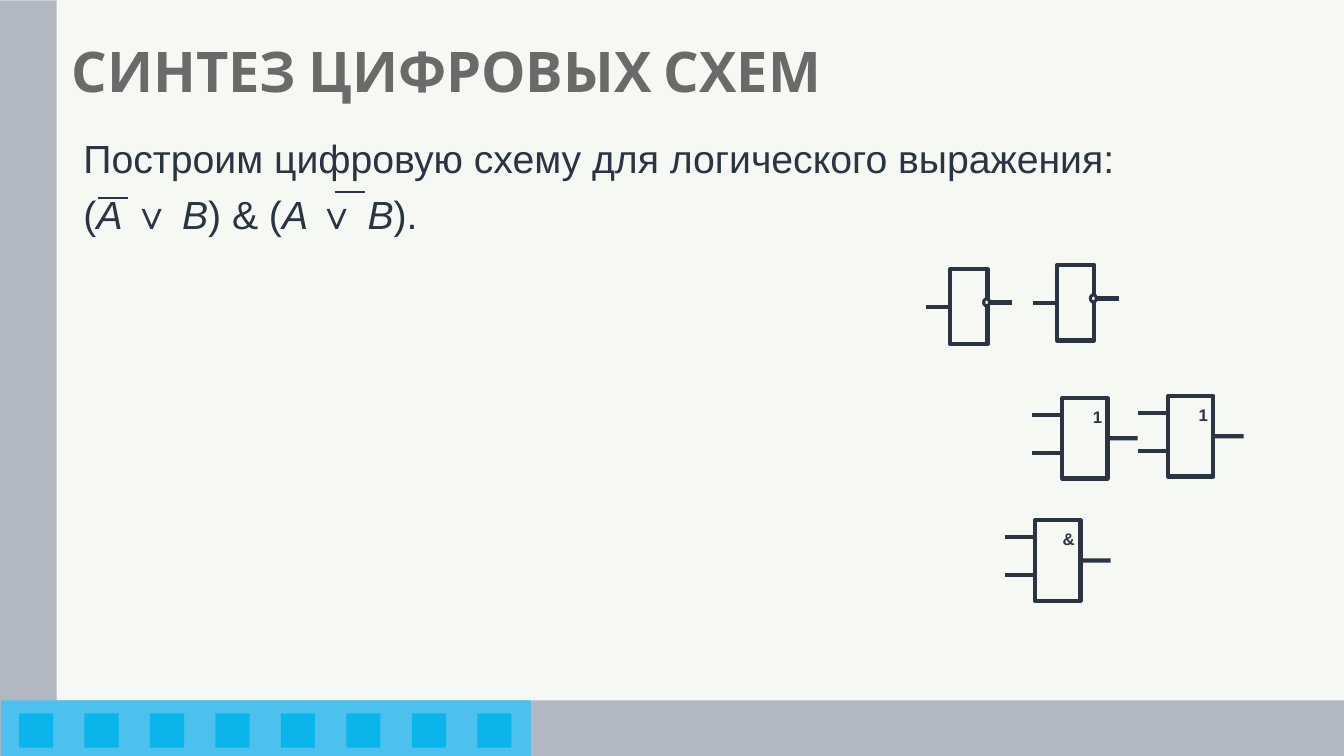
from lxml.etree import SubElement
from pptx import Presentation
from pptx.dml.color import RGBColor
from pptx.enum.shapes import MSO_CONNECTOR, MSO_SHAPE
from pptx.enum.text import MSO_ANCHOR, MSO_AUTO_SIZE, PP_ALIGN
from pptx.oxml.ns import qn
from pptx.util import Cm, Pt

INK = "2A3442"
TITLE_GRAY = "6A6A6A"
BAR_GRAY = "B2B8C2"
BAND_BLUE = "4DC1ED"
SQUARE_BLUE = "0AB5EC"
PAPER = "F6F8F3"
WHITE = "FFFFFF"
LEFT_SIDE, RIGHT_SIDE = 1, 3


def color(hex_value):
    return RGBColor.from_string(hex_value)


def add_text(paragraph, text, size=28, font="Arial", fill=INK, bold=False, italic=False):
    run = paragraph.add_run()
    run.text = text
    run.font.size = Pt(size)
    run.font.name = font
    run.font.bold = bold
    run.font.italic = italic
    run.font.color.rgb = color(fill)


class CircuitSlide:
    stroke = 3

    def __init__(self, presentation):
        self.slide = presentation.slides.add_slide(presentation.slide_layouts[1])
        self.shapes = self.slide.shapes
        background = self.slide.background.fill
        background.solid()
        background.fore_color.rgb = color(PAPER)

    def box(self, left, top, width, height, fill=None, line=None, weight=stroke,
            kind=MSO_SHAPE.RECTANGLE, parent=None):
        shape = (parent or self.shapes).add_shape(
            kind, Cm(left), Cm(top), Cm(width), Cm(height))
        shape.shadow.inherit = False
        if fill:
            shape.fill.solid()
            shape.fill.fore_color.rgb = color(fill)
        else:
            shape.fill.background()
        if line:
            shape.line.color.rgb = color(line)
            shape.line.width = Pt(weight)
        else:
            shape.line.fill.background()
        return shape

    def wire(self, left, top, length, weight=stroke, parent=None):
        connector = (parent or self.shapes).add_connector(
            MSO_CONNECTOR.STRAIGHT, Cm(left), Cm(top), Cm(left + length), Cm(top))
        connector.line.color.rgb = color(INK)
        connector.line.width = Pt(weight)
        SubElement(connector._element.spPr, qn("a:effectLst"))
        return connector

    def place(self, placeholder, left, top, anchor):
        placeholder.left, placeholder.top = Cm(left), Cm(top)
        placeholder.width, placeholder.height = Cm(30.18), Cm(3.68)
        frame = placeholder.text_frame
        frame.word_wrap = True
        frame.auto_size = MSO_AUTO_SIZE.NONE
        frame.vertical_anchor = anchor
        return frame

    def title(self, text):
        frame = self.place(self.shapes.title, 1.55, 0.03, MSO_ANCHOR.MIDDLE)
        paragraph = frame.paragraphs[0]
        paragraph.alignment = PP_ALIGN.JUSTIFY
        paragraph.line_spacing = 0.9
        add_text(paragraph, text, size=40, font="Cabin", fill=TITLE_GRAY, bold=True)

    def body(self, lines):
        frame = self.place(self.slide.placeholders[1], 1.85, 3.38, MSO_ANCHOR.TOP)
        for index, runs in enumerate(lines):
            paragraph = frame.add_paragraph() if index else frame.paragraphs[0]
            paragraph.line_spacing = 0.9
            paragraph.space_before = Pt(10)
            properties = paragraph._p.get_or_add_pPr()
            properties.set("marL", "0")
            properties.set("indent", "0")
            SubElement(properties, qn("a:buNone"))
            for position, text in enumerate(runs):
                add_text(paragraph, text, italic=position % 2 == 1)

    def inverter(self, left, top):
        group = self.shapes.add_group_shape().shapes
        case = self.box(left, top, 0.94, 1.9, line=INK, parent=group)
        self.wire(left - 0.62, top + 0.95, 0.62, parent=group).end_connect(case, LEFT_SIDE)
        self.wire(left + 0.93, top + 0.84, 0.62, parent=group)
        self.box(left + 0.84, top + 0.75, 0.15, 0.18, fill=WHITE, line=INK,
                 weight=2.25, kind=MSO_SHAPE.OVAL, parent=group)

    def gate(self, left, top, symbol, symbol_width):
        group = self.shapes.add_group_shape().shapes
        case = self.box(left, top, 1.14, 2.03, line=INK, parent=group)
        for offset in (0.43, 1.38):
            self.wire(left - 0.76, top + offset, 0.76, parent=group)
        output = self.wire(left + 1.14, top + 1.015, 0.76, parent=group)
        output.begin_connect(case, RIGHT_SIDE)
        label = group.add_textbox(Cm(left + 1.03 - symbol_width), Cm(top + 0.1),
                                  Cm(symbol_width), Cm(0.76))
        frame = label.text_frame
        frame.word_wrap = True
        frame.auto_size = MSO_AUTO_SIZE.SHAPE_TO_FIT_TEXT
        frame.margin_left, frame.margin_right = Cm(0.22), 0
        add_text(frame.paragraphs[0], symbol, size=12, bold=True)

    def frame_bars(self):
        self.box(-0.01, 0.01, 1.44, 19.05, fill=BAR_GRAY)
        self.box(-0.02, 17.65, 33.9, 1.44, fill=BAR_GRAY)
        self.box(0.02, 17.65, 13.36, 1.44, fill=BAND_BLUE)
        for index in range(8):
            self.box(0.48 + 1.65 * index, 17.98, 0.86, 0.86, fill=SQUARE_BLUE)


def main():
    presentation = Presentation()
    presentation.slide_width = Cm(33.87)
    presentation.slide_height = Cm(19.05)

    circuit = CircuitSlide(presentation)
    circuit.frame_bars()
    circuit.title("СИНТЕЗ ЦИФРОВЫХ СХЕМ")
    circuit.body([
        ["Построим цифровую схему для логического выражения:"],
        ["(", "A ", "∨ ", "В", ") & (", "A ", "∨ ", "В", ")."],
    ])
    for left, top in ((2.46, 4.98), (8.43, 4.85)):
        circuit.wire(left, top, 0.76, weight=1.5)
    for left, top in ((23.95, 6.78), (26.64, 6.68)):
        circuit.inverter(left, top)
    for left, top, symbol, symbol_width in (
        (26.77, 10.03, "1", 0.48),
        (29.44, 9.98, "1", 0.48),
        (26.09, 13.11, "&", 0.56),
    ):
        circuit.gate(left, top, symbol, symbol_width)

    presentation.save("out.pptx")


if __name__ == "__main__":
    main()
